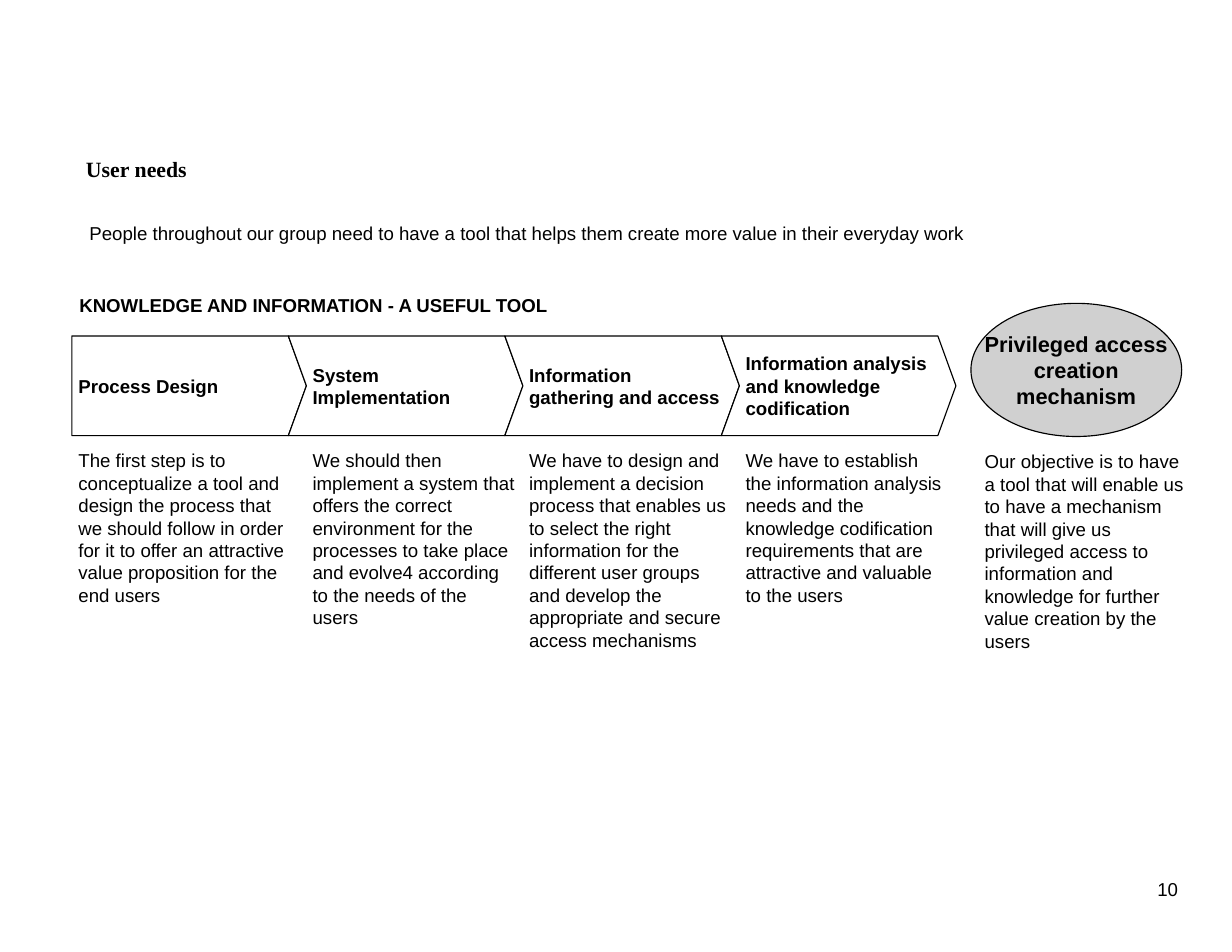
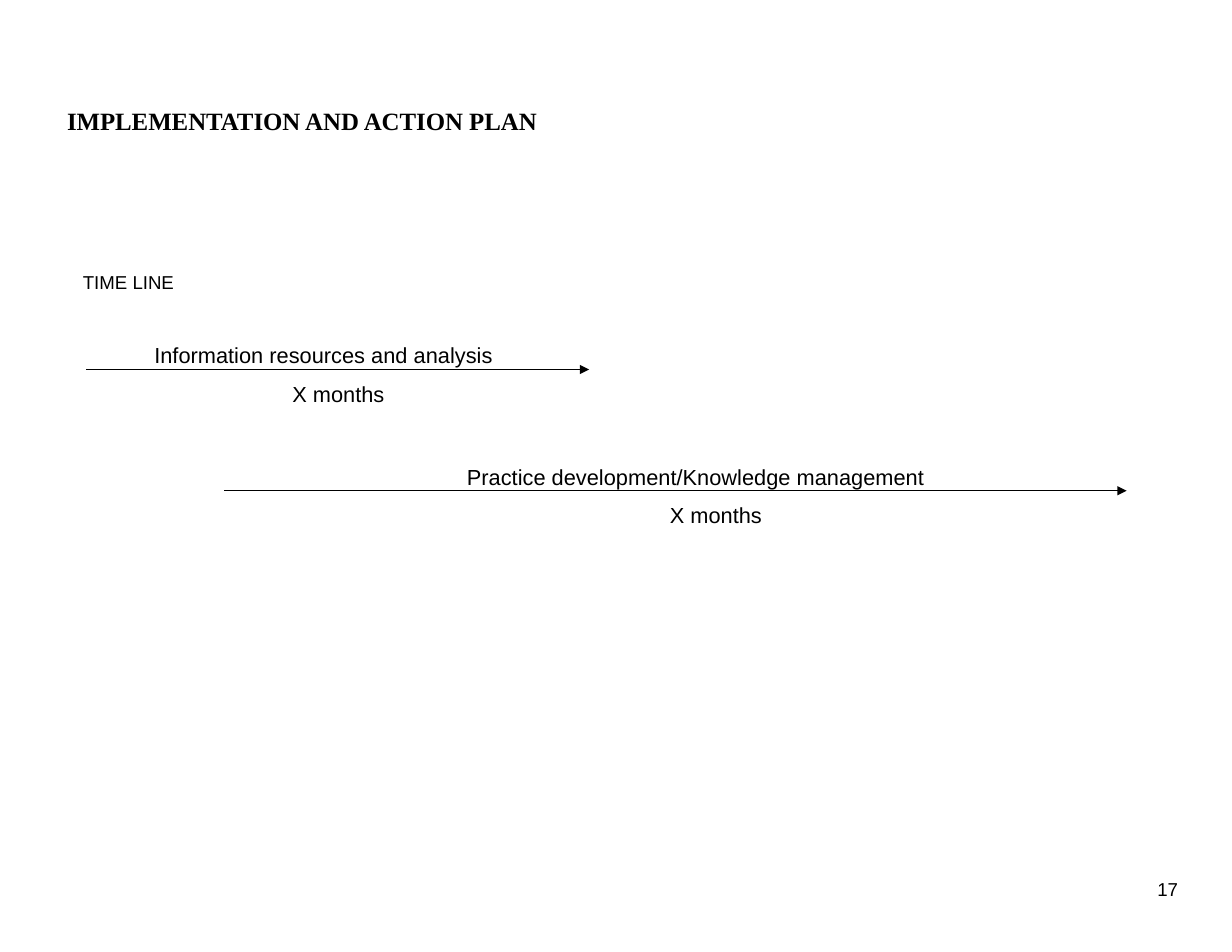
import dataclasses

import lxml.etree
import pptx
import pptx.dml.color
import pptx.enum.shapes
import pptx.enum.text
import pptx.oxml.ns
import pptx.util

Cm = pptx.util.Cm
Pt = pptx.util.Pt
Align = pptx.enum.text.PP_ALIGN
Anchor = pptx.enum.text.MSO_ANCHOR
Shape = pptx.enum.shapes.MSO_SHAPE


@dataclasses.dataclass(frozen=True)
class Theme:
    ink: str = "000000"
    paper: str = "FFFFFF"
    goal: str = "D0D0D0"
    sans: str = "Arial"
    serif: str = "Times New Roman"
    body: int = 12
    large: int = 14
    head: int = 16
    line: float = 0.75


THEME = Theme()
PAD = (0.25, 0.13, 0.25, 0.13)
BARE = (0, 0, 0, 0)

# Process chain, in centimetres
LEFT, TOP, PITCH, TALL, TIP = 1.63, 7.62, 4.91, 2.26, 0.41
NOTE_TOP, NOTE_WIDE = 10.19, 4.62

STEPS = [
    ("Process Design",
     "The first step is to conceptualize a tool and design the process that "
     "we should follow in order for it to offer an attractive value "
     "proposition for the end users"),
    ("System Implementation",
     "We should then implement a system that offers the correct environment "
     "for the processes to take place and evolve4 according to the needs of "
     "the users"),
    ("Information gathering and access",
     "We have to design and implement a decision process that enables us to "
     "select the right information for the different user groups and develop "
     "the appropriate and secure access mechanisms"),
    ("Information analysis\nand knowledge\ncodification",
     "We have to establish the information analysis needs and the knowledge "
     "codification requirements that are attractive and valuable to the users"),
]
GOAL = ("Our objective is to have a tool that will enable us to have a "
        "mechanism that will give us privileged access to information and "
        "knowledge for further value creation by the users")

# Start x, end x, y of the arrow; then text, left, top, width of each label
SPANS = [
    (1.96, 13.36, 8.38,
     [("Information resources and analysis", 3.25, 7.62, 8.18),
      ("X months", 6.38, 8.51, 2.59)]),
    (5.08, 25.55, 11.13,
     [("Practice development/Knowledge management", 10.34, 10.39, 10.87),
      ("X months", 14.94, 11.25, 2.59)]),
]


def put(item, values):
    for name, value in values.items():
        setattr(item, name, value)


def tint(text):
    return pptx.dml.color.RGBColor.from_string(text)


def write(shape, text, size=THEME.body, bold=False, face=THEME.sans,
          align=Align.LEFT, anchor=Anchor.TOP, pad=PAD, wrap=False):
    """Fill a shape with text, one paragraph for each line."""
    frame = shape.text_frame
    frame.text = text
    put(frame, {"word_wrap": wrap, "vertical_anchor": anchor,
                "auto_size": pptx.enum.text.MSO_AUTO_SIZE.NONE})
    sides = ("margin_left", "margin_top", "margin_right", "margin_bottom")
    put(frame, {side: Cm(gap) for side, gap in zip(sides, pad)})
    for para in frame.paragraphs:
        para.alignment = align
        put(para.font, {"size": Pt(size), "bold": bold, "name": face})
        para.font.color.rgb = tint(THEME.ink)


def paint(shape, fill):
    shape.shadow.inherit = False
    shape.fill.solid()
    shape.fill.fore_color.rgb = tint(fill)
    stroke(shape.line)


def stroke(line):
    line.color.rgb = tint(THEME.ink)
    line.width = Pt(THEME.line)


def label(slide, text, x, y, wide, tall, **style):
    box = slide.shapes.add_textbox(Cm(x), Cm(y), Cm(wide), Cm(tall))
    write(box, text, **style)


def note(slide, text, x, y, wide=NOTE_WIDE):
    label(slide, text, x, y, wide, 4.57, pad=BARE, wrap=True)


def page(deck, title, x, y, wide, tall, size, number):
    """Add a title-only slide with its title and page number."""
    slide = deck.slides.add_slide(deck.slide_layouts[5])
    head = slide.shapes.title
    put(head, {"left": Cm(x), "top": Cm(y),
               "width": Cm(wide), "height": Cm(tall)})
    write(head, title, size=size, bold=True, face=THEME.serif)
    label(slide, number, 20.9, 19.91, 5.82, 0.51,
          align=Align.RIGHT, pad=BARE, wrap=True)
    return slide


def step(slide, order, text, detail):
    """Draw one link of the chain, flat on the left if first, and its note."""
    x = LEFT + order * PITCH
    first = order == 0
    inset = 0.15 if first else 0.55
    end, mid, low = x + PITCH, TOP + TALL / 2, TOP + TALL
    points = [(end, TOP), (end + TIP, mid), (end, low), (x, low)]
    if not first:
        points.append((x + TIP, mid))
    path = slide.shapes.build_freeform(Cm(x), Cm(TOP))
    path.add_line_segments([(Cm(a), Cm(b)) for a, b in points], close=True)
    link = path.convert_to_shape()
    paint(link, THEME.paper)
    write(link, text, bold=True, anchor=Anchor.MIDDLE,
          pad=(inset, 0, TIP, 0), wrap=True)
    note(slide, detail, x + inset, NOTE_TOP, 4.8 if first else NOTE_WIDE)


def arrow(slide, start, end, y):
    line = slide.shapes.add_connector(
        pptx.enum.shapes.MSO_CONNECTOR.STRAIGHT,
        Cm(start), Cm(y), Cm(end), Cm(y))
    stroke(line.line)
    qn = pptx.oxml.ns.qn
    lxml.etree.SubElement(line.line._get_or_add_ln(), qn("a:tailEnd"),
                          type="triangle")
    lxml.etree.SubElement(line._element.spPr, qn("a:effectLst"))


def needs(deck):
    slide = page(deck, "User needs", 1.7, 3.4, 2.79, 0.86, THEME.large, "10")
    label(slide, "People throughout our group need to have a tool that helps "
          "them create more value in their everyday work",
          1.78, 4.9, 20.37, 0.76)
    label(slide, "KNOWLEDGE AND INFORMATION - A USEFUL TOOL",
          1.55, 6.53, 11.23, 0.76, bold=True)
    for order, (text, detail) in enumerate(STEPS):
        step(slide, order, text, detail)
    goal = slide.shapes.add_shape(Shape.OVAL, Cm(22.02), Cm(6.88),
                                  Cm(4.78), Cm(3.02))
    paint(goal, THEME.goal)
    write(goal, "Privileged access\ncreation\nmechanism", size=THEME.large,
          bold=True, align=Align.CENTER, anchor=Anchor.MIDDLE)
    note(slide, GOAL, 22.33, 10.21)


def plan(deck):
    slide = page(deck, "IMPLEMENTATION AND ACTION PLAN",
                 1.27, 2.26, 11.3, 0.94, THEME.head, "17")
    label(slide, "TIME LINE", 1.63, 6.02, 2.57, 0.76)
    for start, end, y, names in SPANS:
        arrow(slide, start, end, y)
        for text, x, top, wide in names:
            label(slide, text, x, top, wide, 0.86, size=THEME.large)


def main():
    deck = pptx.Presentation()
    put(deck, {"slide_width": Cm(27.94), "slide_height": Cm(21.59)})
    needs(deck)
    plan(deck)
    deck.save("out.pptx")


if __name__ == "__main__":
    main()
